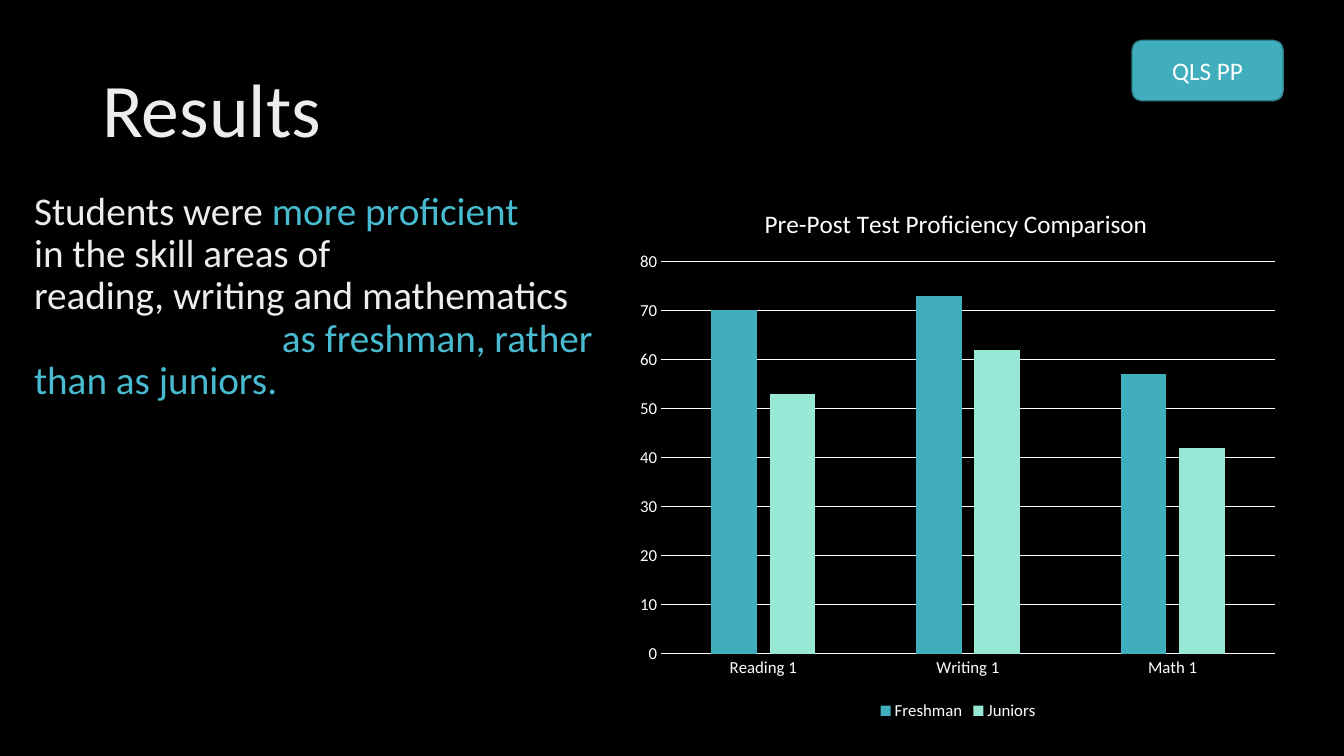
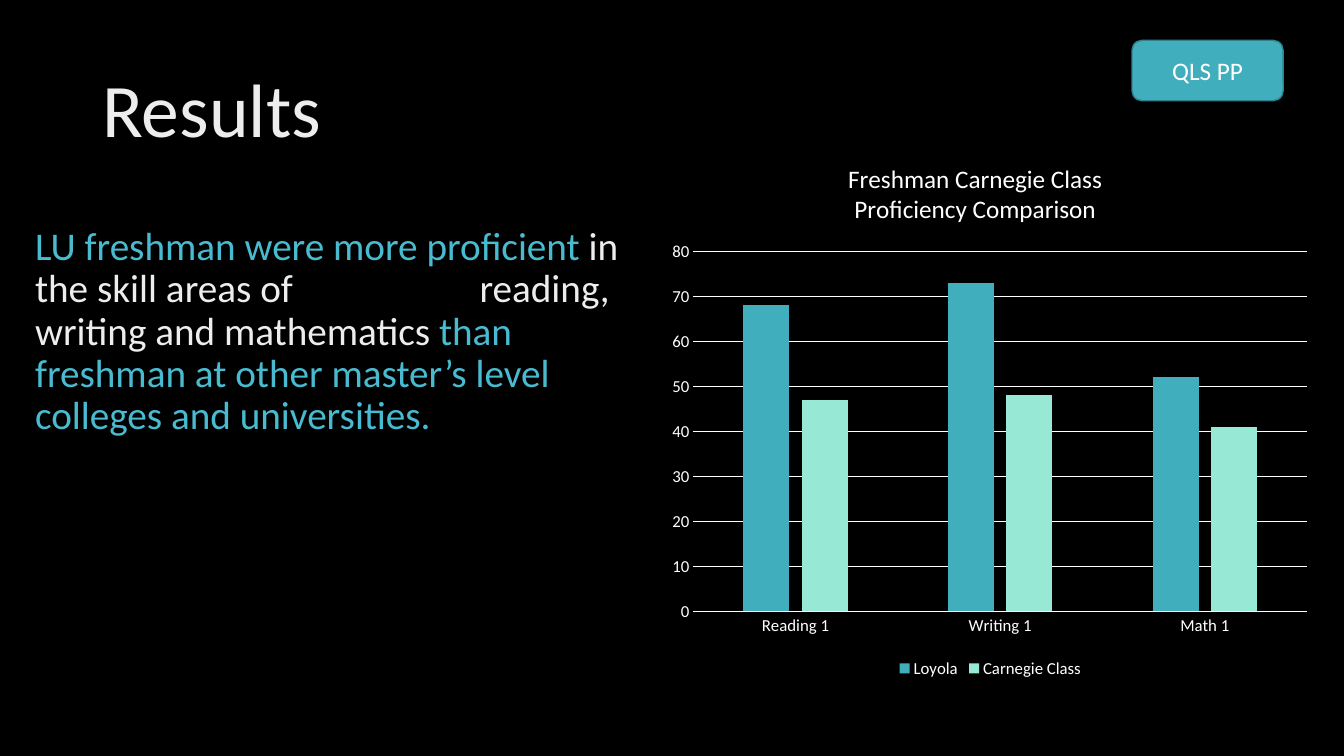
from pptx import Presentation
from pptx.chart.data import CategoryChartData as Data
from pptx.dml.color import RGBColor
from pptx.enum.chart import XL_CHART_TYPE as Kind, XL_LEGEND_POSITION as Spot, XL_TICK_MARK as Tick
from pptx.enum.shapes import MSO_SHAPE as Form
from pptx.enum.text import MSO_ANCHOR as Anchor, PP_ALIGN as Align
from pptx.oxml.xmlchemy import OxmlElement as Node
from pptx.util import Pt

FONT = "Calibri"
BLACK, WHITE, PALE = "000000", "FFFFFF", "EDEDED"
TEAL, MINT, CYAN, EDGE = "41AEBD", "97E9D5", "49BBD1", "30818C"
AREAS = ["Reading 1", "Writing 1", "Math 1"]


def paint(part, color):
    part.solid()
    part.fore_color.rgb = RGBColor.from_string(color)


def style(font, size, color=WHITE):
    font.name = FONT
    font.size = Pt(size)
    font.bold = False
    font.color.rgb = RGBColor.from_string(color)


def write(frame, runs, size, align=Align.LEFT, anchor=Anchor.TOP, space=1.0, stop=None):
    frame.word_wrap = True
    frame.vertical_anchor = anchor
    par = frame.paragraphs[0]
    par.alignment = align
    par.line_spacing = space
    if stop:
        tabs, tab = Node("a:tabLst"), Node("a:tab")
        tab.set("pos", str(Pt(stop)))
        tab.set("algn", "l")
        tabs.append(tab)
        par._p.get_or_add_pPr().append(tabs)
    for words, color in runs:
        for row, line in enumerate(words.split("\n")):
            if row:
                par.add_line_break()
            if line:
                run = par.add_run()
                run.text = line
                style(run.font, size, color)


def place(parent, index, **sizes):
    for old in parent.findall(Node("c:layout").tag):
        parent.remove(old)
    layout, manual = Node("c:layout"), Node("c:manualLayout")
    values = {"xMode": "edge", "yMode": "edge", **sizes}
    if "w" in sizes:
        values = {"layoutTarget": "inner", **values}
    for key, value in values.items():
        item = Node("c:" + key)
        item.set("val", str(value))
        manual.append(item)
    layout.append(manual)
    parent.insert(index, layout)


class Deck:
    def __init__(self):
        self.file = Presentation()
        self.file.slide_width, self.file.slide_height = Pt(960), Pt(540)
        self.slide = None

    def start(self, title, badge):
        self.slide = self.file.slides.add_slide(self.file.slide_layouts[6])
        paint(self.slide.background.fill, BLACK)
        self.text(66, 28.8, 828, 104.4, [(title, PALE)], size=54, anchor=Anchor.MIDDLE, space=0.9)
        self.badge(badge)

    def text(self, x, y, w, h, runs, **form):
        box = self.slide.shapes.add_textbox(Pt(x), Pt(y), Pt(w), Pt(h))
        write(box.text_frame, runs, **form)

    def body(self, x, y, runs, stop):
        self.text(x, y, 432, 342.7, runs, size=28, space=0.9, stop=stop)

    def badge(self, words):
        box = self.slide.shapes.add_shape(
            Form.ROUNDED_RECTANGLE, Pt(808.6), Pt(28.8), Pt(108), Pt(43.2))
        box.shadow.inherit = False
        paint(box.fill, TEAL)
        paint(box.line.fill, EDGE)
        box.line.width = Pt(1)
        write(box.text_frame, [(words, WHITE)], 18, align=Align.CENTER, anchor=Anchor.MIDDLE)

    def chart(self, x, y, title, left, top, tall, series):
        data = Data()
        data.categories = AREAS
        for name, values in series.items():
            data.add_series(name, values)
        chart = self.slide.shapes.add_chart(
            Kind.COLUMN_CLUSTERED, Pt(x), Pt(y), Pt(471.6), Pt(389.5), data).chart
        style(chart.font, 10)
        self.head(chart, title, left)
        self.axes(chart)
        plot = chart.plots[0]
        plot.gap_width, plot.overlap = 219, -27
        plot.vary_by_categories = False
        for bar, color in zip(plot.series, (TEAL, MINT)):
            paint(bar.format.fill, color)
        chart.has_legend = True
        chart.legend.position = Spot.BOTTOM
        chart.legend.include_in_layout = False
        style(chart.legend.font, 12)
        place(chart._chartSpace.chart.plotArea, 0, x=0.05, y=top, w=0.93, h=tall)

    def head(self, chart, title, left):
        chart.has_title = True
        frame = chart.chart_title.text_frame
        for row, line in enumerate(title.split("\n")):
            par = frame.add_paragraph() if row else frame.paragraphs[0]
            par.alignment = Align.CENTER
            run = par.add_run()
            run.text = line
            style(run.font, 18)
        chart.chart_title.include_in_layout = False
        place(chart.chart_title._element, 1, x=left, y=0.04)

    def axes(self, chart):
        base, scale = chart.category_axis, chart.value_axis
        for axis in (base, scale):
            axis.major_tick_mark = axis.minor_tick_mark = Tick.NONE
            style(axis.tick_labels.font, 12)
        scale.minimum_scale, scale.maximum_scale, scale.major_unit = 0, 80, 10
        scale.format.line.fill.background()
        for line in (base.format.line, scale.major_gridlines.format.line):
            paint(line.fill, WHITE)
            line.width = Pt(0.75)


def main():
    deck = Deck()
    deck.start("Results", "QLS PP")
    deck.body(17.3, 133.2, [
        ("Students were ", PALE),
        ("more proficient\n", CYAN),
        ("in the skill areas of\nreading, writing and mathematics\n", PALE),
        ("\tas freshman, rather than as juniors.", CYAN),
    ], stop=177)
    deck.chart(448.6, 128.2, "Pre-Post Test Proficiency Comparison", 0.2, 0.15, 0.72,
               {"Freshman": (70, 73, 57), "Juniors": (53, 62, 42)})

    deck.start("Results", "QLS PP")
    deck.body(18, 158.4, [
        ("LU freshman were more proficient ", CYAN),
        ("in the skill areas of\treading, writing and mathematics ", PALE),
        ("than freshman at other master’s level colleges and universities.", CYAN),
    ], stop=317.5)
    deck.chart(471.6, 97.9, "Freshman Carnegie Class\nProficiency Comparison", 0.28, 0.21, 0.66,
               {"Loyola": (68, 73, 52), "Carnegie Class": (47, 48, 41)})
    deck.file.save("out.pptx")


if __name__ == "__main__":
    main()
